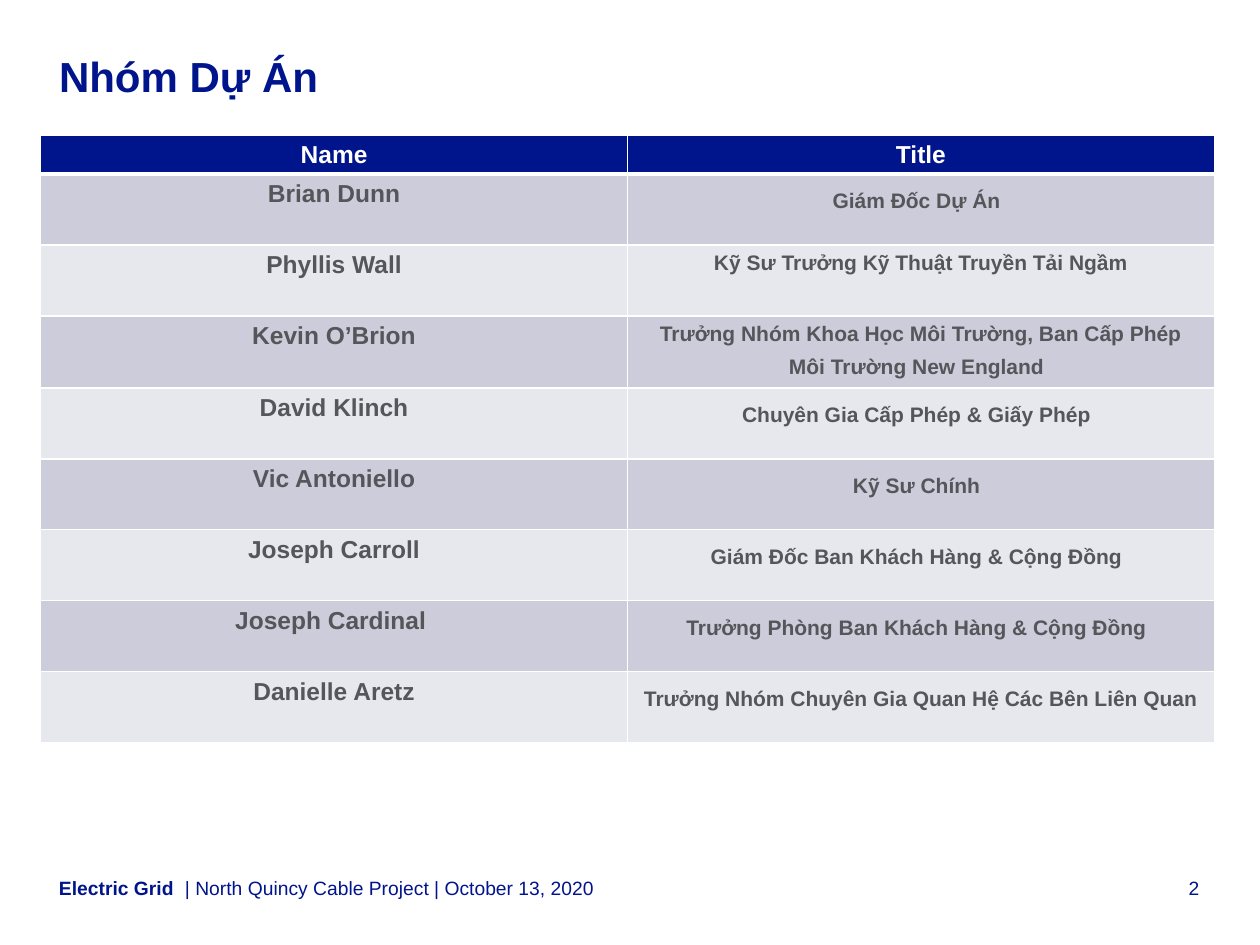
from lxml.etree import SubElement
from pptx import Presentation
from pptx.dml.color import RGBColor
from pptx.enum.text import MSO_ANCHOR, PP_ALIGN
from pptx.oxml.ns import qn
from pptx.util import Cm, Pt

NAVY = RGBColor(0x00, 0x14, 0x8C)
GREY = RGBColor(0x55, 0x55, 0x5A)
WHITE = RGBColor(0xFF, 0xFF, 0xFF)
BAND_DARK = RGBColor(0xCC, 0xCC, 0xDA)
BAND_LIGHT = RGBColor(0xE7, 0xE7, 0xEE)

TEAM = [
    ("Brian Dunn", "Giám Đốc Dự Án", " "),
    ("Phyllis Wall", "Kỹ Sư Trưởng Kỹ Thuật Truyền Tải Ngầm", ""),
    ("Kevin O’Brion",
     "Trưởng Nhóm Khoa Học Môi Trường, Ban Cấp Phép Môi Trường New England", " "),
    ("David Klinch", "Chuyên Gia Cấp Phép & Giấy Phép", " "),
    ("Vic Antoniello", "Kỹ Sư Chính", " "),
    ("Joseph Carroll", "Giám Đốc Ban Khách Hàng & Cộng Đồng", " "),
    ("Joseph Cardinal ", "Trưởng Phòng Ban Khách Hàng & Cộng Đồng", " "),
    ("Danielle Aretz", "Trưởng Nhóm Chuyên Gia Quan Hệ Các Bên Liên Quan", " "),
]


class SlideBuilder:
    font_name = "Arial"

    def __init__(self, slide):
        self.slide = slide

    def add_runs(self, paragraph, runs, color, bold, align=PP_ALIGN.LEFT):
        paragraph.alignment = align
        for text, size in runs:
            run = paragraph.add_run()
            run.text = text
            run.font.name = self.font_name
            run.font.size = Pt(size)
            run.font.bold = bold
            run.font.color.rgb = color

    def frame(self, shape, anchor):
        frame = shape.text_frame
        frame.margin_left = frame.margin_right = 0
        frame.margin_top = frame.margin_bottom = 0
        frame.vertical_anchor = anchor
        frame.word_wrap = True
        return frame.paragraphs[0]

    def title(self, text):
        heading = self.slide.shapes.title
        heading.left, heading.top = Cm(1.19), Cm(1.02)
        heading.width, heading.height = Cm(23.01), Cm(1.02)
        self.add_runs(self.frame(heading, MSO_ANCHOR.TOP), [(text, 24)], NAVY, True)

    def footer(self, text, left, width, bold=False, align=PP_ALIGN.LEFT):
        box = self.slide.shapes.add_textbox(Cm(left), Cm(17.65), Cm(width), Cm(0.48))
        paragraph = self.frame(box, MSO_ANCHOR.BOTTOM)
        self.add_runs(paragraph, [(text, 11)], NAVY, bold, align)

    def border(self, cell, bottom):
        properties = cell._tc.get_or_add_tcPr()
        sides = [("a:lnL", 1), ("a:lnR", 1), ("a:lnT", 1), ("a:lnB", bottom)]
        for position, (side, width) in enumerate(sides):
            line = SubElement(properties, qn(side), w=str(int(Pt(width))))
            fill = SubElement(line, qn("a:solidFill"))
            SubElement(fill, qn("a:srgbClr"), val=str(WHITE))
            properties.insert(position, line)

    def cell(self, cell, runs, color, fill, bottom=1):
        cell.margin_bottom = Cm(0.05)
        cell.fill.solid()
        cell.fill.fore_color.rgb = fill
        self.border(cell, bottom)
        paragraph = cell.text_frame.paragraphs[0]
        paragraph.space_after = Pt(6)
        self.add_runs(paragraph, runs, color, True, PP_ALIGN.CENTER)

    def team_table(self, headings, members):
        table = self.slide.shapes.add_table(
            len(members) + 1, len(headings),
            Cm(0.82), Cm(2.72), Cm(23.66), Cm(12.23)).table
        table.rows[0].height = Cm(0.79)
        for column, heading in enumerate(headings):
            self.cell(table.cell(0, column), [(heading, 14)], WHITE, NAVY, 3)
        for row, (name, role, ending) in enumerate(members, 1):
            table.rows[row].height = Cm(1.43)
            band = BAND_DARK if row % 2 else BAND_LIGHT
            role_runs = [(role, 12)] + ([(ending, 18)] if ending else [])
            self.cell(table.cell(row, 0), [(name, 14)], GREY, band)
            self.cell(table.cell(row, 1), role_runs, GREY, band)


def main():
    deck = Presentation()
    deck.slide_width, deck.slide_height = Cm(25.4), Cm(19.05)
    builder = SlideBuilder(deck.slides.add_slide(deck.slide_layouts[5]))
    builder.footer("2", 22.71, 1.47, align=PP_ALIGN.RIGHT)
    builder.footer("Electric Grid", 1.19, 2.54, bold=True)
    builder.footer("| North Quincy Cable Project | October 13, 2020", 3.73, 18.19)
    builder.title("Nhóm Dự Án")
    builder.team_table(["Name", "Title"], TEAM)
    deck.save("out.pptx")


if __name__ == "__main__":
    main()
